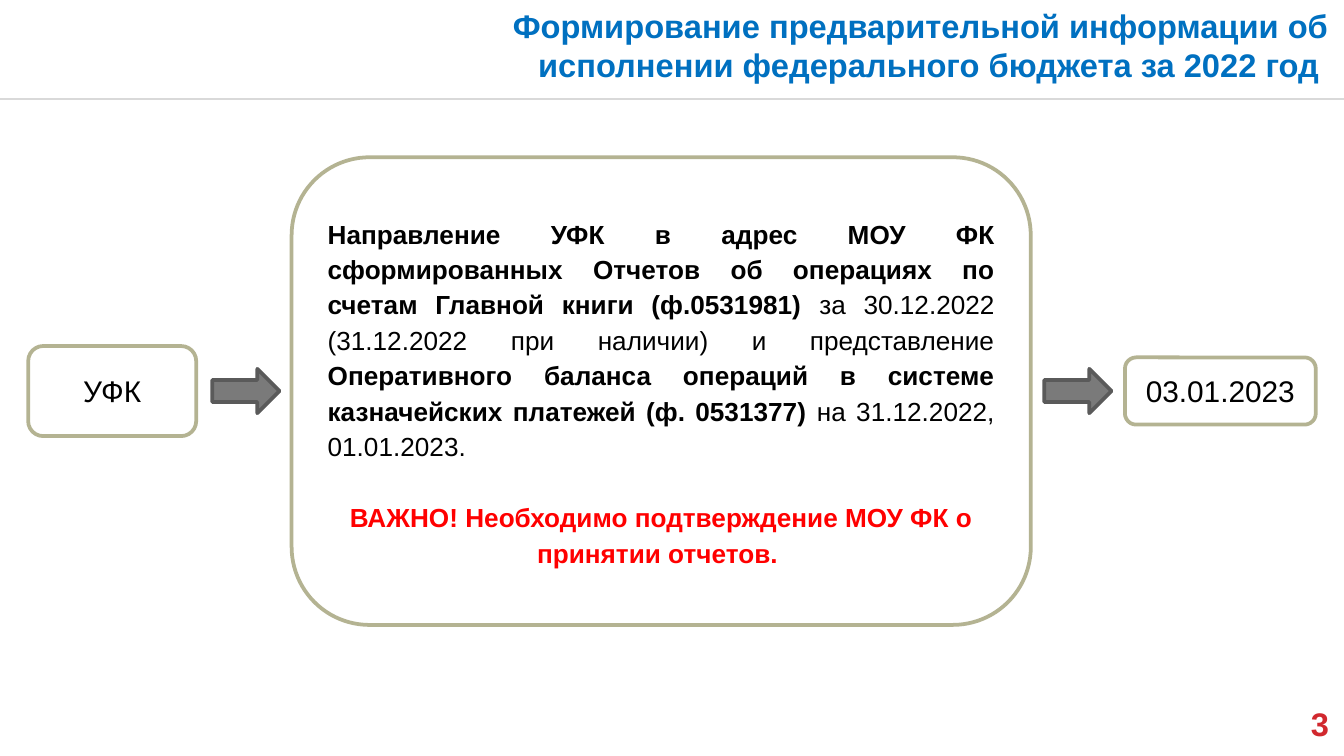
import pptx
import pptx.util
import pptx.dml.color
import pptx.enum.shapes
import pptx.enum.text
import pptx.oxml.ns
import lxml.etree

Inches, Pt = pptx.util.Inches, pptx.util.Pt
Align = pptx.enum.text.PP_ALIGN
Anchor = pptx.enum.text.MSO_ANCHOR
Kind = pptx.enum.shapes.MSO_SHAPE

# Content
TITLE = "Формирование предварительной информации об исполнении федерального бюджета за 2022 год "
NUMBER = "3"
TASK = [  # text, bold
    ("Направление УФК в адрес МОУ ФК сформированных Отчетов об операциях по счетам Главной книги (ф.0531981) ", True),
    ("за 30.12.2022 (31.12.2022 при наличии) и представление ", False),
    ("Оперативного баланса операций в системе казначейских платежей (ф. 0531377) ", True),
    ("на 31.12.2022, 01.01.2023. ", False),
]
ALERT = "ВАЖНО! Необходимо подтверждение МОУ ФК о принятии отчетов. "
SENDER, DATE = "УФК", "03.01.2023"

# Layout: a 16:9 slide, with the flow centred on one height
WIDTH = 10
HEIGHT = WIDTH * 9 / 16
MIDDLE = 2.91
BOXES = {  # left, width, height
    "sender": (0.21, 1.25, 0.67),
    "task": (2.17, 5.5, 3.48),
    "date": (8.37, 1.42, 0.5),
}
ARROWS = (1.58, 7.77)
ARROW = (0.5, 0.33)


def color(code):
    return pptx.dml.color.RGBColor.from_string(code)


def style(run, size, code, bold=False):
    font = run.font
    font.name, font.size, font.bold = "Arial", Pt(size), bold
    font.color.rgb = color(code)


def write(par, text, align, size, code, bold=False):
    par.text = text
    par.alignment = align
    style(par.runs[0], size, code, bold)


def bare(frame):
    frame.word_wrap = True
    frame.auto_size = pptx.enum.text.MSO_AUTO_SIZE.NONE
    frame.vertical_anchor = Anchor.TOP
    frame.margin_left = frame.margin_right = 0
    frame.margin_top = frame.margin_bottom = 0


def draw(kind, left, width, height, fill, line):
    shape = slide.shapes.add_shape(
        kind, Inches(left), Inches(MIDDLE - height / 2), Inches(width), Inches(height))
    shape.shadow.inherit = False
    shape.fill.solid()
    shape.fill.fore_color.rgb = color(fill)
    shape.line.color.rgb = color(line)
    shape.line.width = Pt(2)
    frame = shape.text_frame
    frame.word_wrap = True
    frame.vertical_anchor = Anchor.MIDDLE
    return frame


def box(name):
    return draw(Kind.ROUNDED_RECTANGLE, *BOXES[name], "FFFFFF", "B4B392")


deck = pptx.Presentation()
deck.slide_width, deck.slide_height = Inches(WIDTH), Inches(HEIGHT)
slide = deck.slides.add_slide(deck.slide_layouts[5])

# Title, rule and page number
title = slide.shapes.title
title.left, title.top = Inches(2.58), Inches(0.04)
title.width, title.height = Inches(7.31), Inches(0.88)
bare(title.text_frame)
write(title.text_frame.paragraphs[0], TITLE, Align.RIGHT, 17.5, "0070C0", True)

rule = slide.shapes.add_connector(
    pptx.enum.shapes.MSO_CONNECTOR.STRAIGHT, 0, Inches(0.74), Inches(WIDTH), Inches(0.74))
rule.line.color.rgb = color("D9D9D9")
rule.line.width = Pt(1)
lxml.etree.SubElement(rule.element.spPr, pptx.oxml.ns.qn("a:effectLst"))

page = slide.shapes.add_textbox(Inches(7.59), Inches(5.24), Inches(2.3), Inches(0.29))
bare(page.text_frame)
write(page.text_frame.paragraphs[0], NUMBER, Align.RIGHT, 17.5, "D1282E", True)

# Task with its warning
frame = box("task")
task = frame.paragraphs[0]
task.alignment = Align.JUSTIFY
for text, bold in TASK:
    run = task.add_run()
    run.text = text
    style(run, 14, "000000", bold)
alert = frame.add_paragraph()
write(alert, ALERT, Align.CENTER, 14, "FF0000", True)
alert.space_before = Pt(19)
for par in frame.paragraphs:
    par.line_spacing = 1.13

# Arrows, sender and date
for left in ARROWS:
    draw(Kind.RIGHT_ARROW, left, *ARROW, "7A7A7A", "5A5A5A")
for name, text in (("sender", SENDER), ("date", DATE)):
    write(box(name).paragraphs[0], text, Align.CENTER, 16, "000000")

deck.save("out.pptx")
